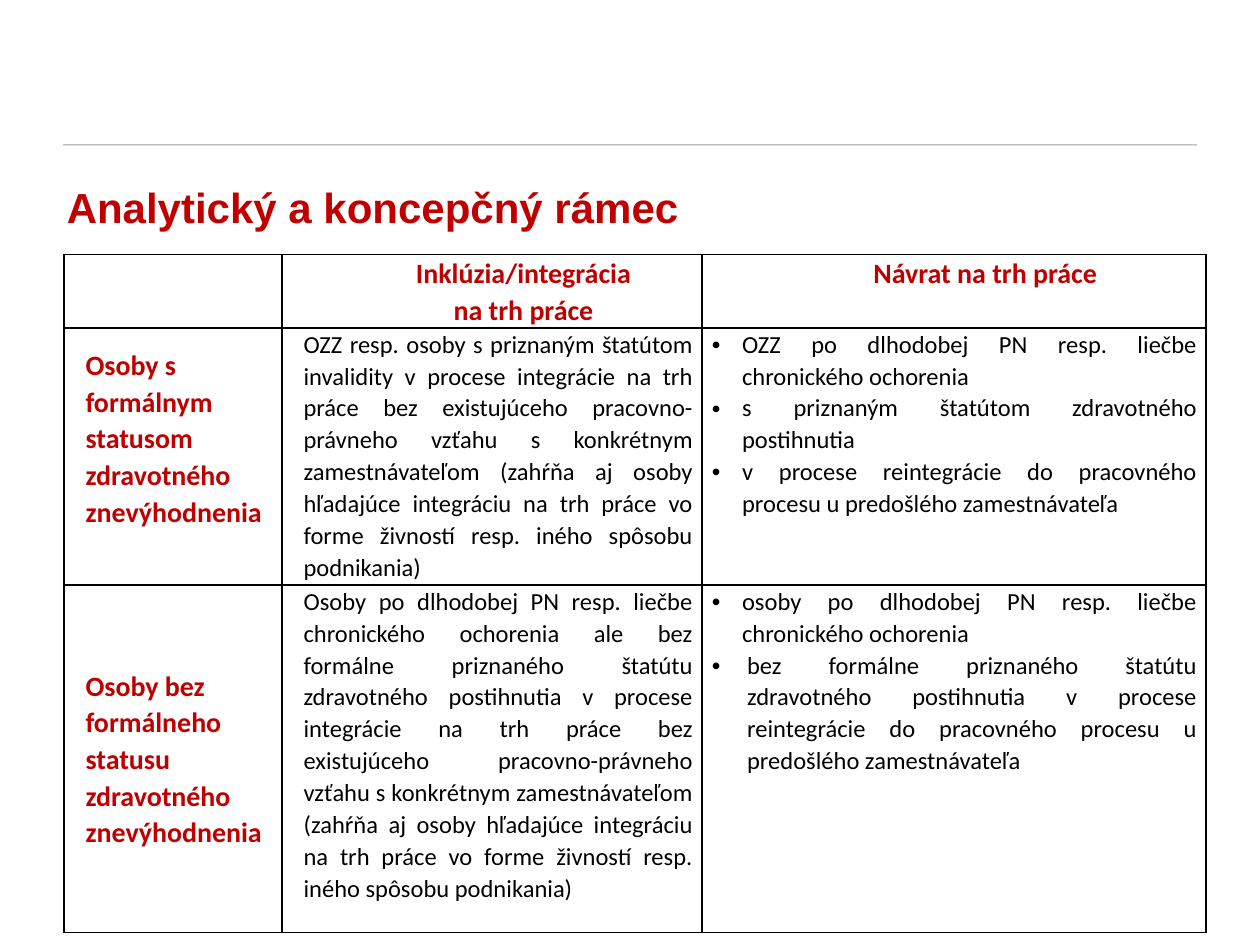
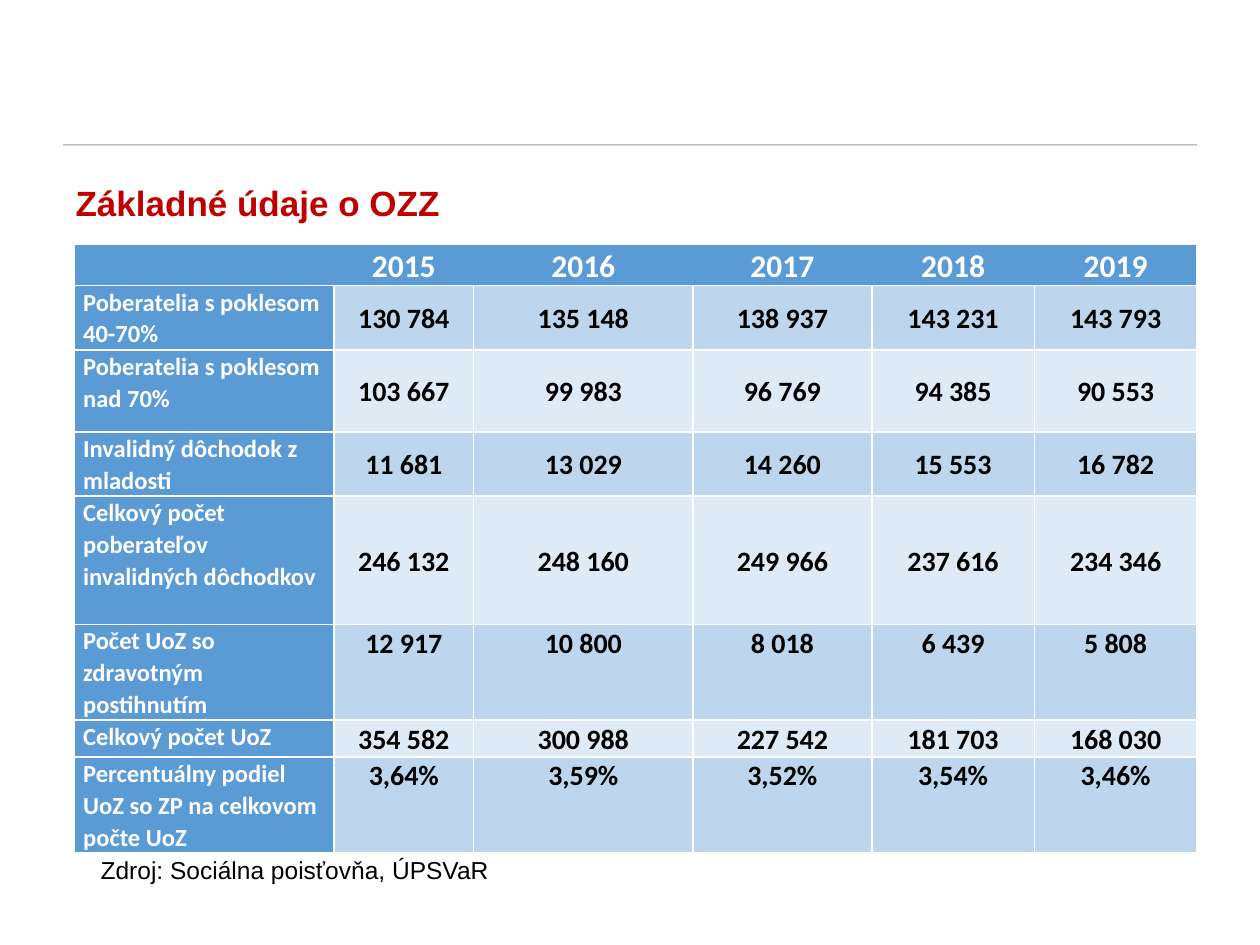
"""Build two slides on labour-market inclusion of people with health disadvantages."""
import pptx
import pptx.dml.color
import pptx.enum.shapes
import pptx.enum.text
import pptx.oxml
import pptx.oxml.ns
import pptx.util
from pptx.util import Inches

RED, BLACK, WHITE = "C00000", "000000", "FFFFFF"
HEADER_BLUE = "5B9BD5"
BAND_BLUES = ("BDD6EE", "DEEAF6")
ALIGN = pptx.enum.text.PP_ALIGN
ANCHOR = pptx.enum.text.MSO_ANCHOR
LINE_SPACING = 1.07

GROUP_HEADINGS = (
    "Osoby s formálnym statusom zdravotného znevýhodnenia",
    "Osoby bez formálneho statusu zdravotného znevýhodnenia",
)
INCLUSION = (
    "OZZ resp. osoby s priznaným štatútom invalidity v procese integrácie na trh práce bez "
    "existujúceho pracovno-právneho vzťahu s konkrétnym zamestnávateľom (zahŕňa aj osoby "
    "hľadajúce integráciu na trh práce vo forme živností resp. iného spôsobu podnikania)",
    "Osoby po dlhodobej PN resp. liečbe chronického ochorenia ale bez formálne priznaného "
    "štatútu zdravotného postihnutia v procese integrácie na trh práce bez existujúceho "
    "pracovno-právneho vzťahu s konkrétnym zamestnávateľom (zahŕňa aj osoby hľadajúce "
    "integráciu na trh práce vo forme živností resp. iného spôsobu podnikania)",
)
RETURN_TO_WORK = (
    (
        ("OZZ po dlhodobej PN resp. liečbe chronického ochorenia", 0.25),
        ("s priznaným štatútom zdravotného postihnutia", 0.25),
        ("v procese reintegrácie do pracovného procesu u predošlého zamestnávateľa", 0.25),
    ),
    (
        ("osoby po dlhodobej PN resp. liečbe chronického ochorenia", 0.25),
        ("bez formálne priznaného štatútu zdravotného postihnutia v procese reintegrácie "
         "do pracovného procesu u predošlého zamestnávateľa", 0.29),
    ),
)
YEARS = ("", "2015", "2016", "2017", "2018", "2019")
STATISTICS = (
    ("Poberatelia s poklesom 40-70%", "130 784", "135 148", "138 937", "143 231", "143 793"),
    ("Poberatelia s poklesom nad 70%", "103 667", "99 983", "96 769", "94 385", "90 553"),
    ("Invalidný dôchodok z mladosti", "11 681", "13 029", "14 260", "15 553", "16 782"),
    ("Celkový počet poberateľov invalidných dôchodkov",
     "246 132", "248 160", "249 966", "237 616", "234 346"),
    ("Počet UoZ so zdravotným postihnutím", "12 917", "10 800", "8 018", "6 439", "5 808"),
    ("Celkový počet UoZ", "354 582", "300 988", "227 542", "181 703", "168 030"),
    ("Percentuálny podiel UoZ so ZP na celkovom počte UoZ",
     "3,64%", "3,59%", "3,52%", "3,54%", "3,46%"),
)
CENTRED_STATISTICS = 4


def rgb(value):
    return pptx.dml.color.RGBColor.from_string(value)


def set_font(paragraph, name, size, color, bold=False):
    font = paragraph.font
    font.name, font.size, font.bold = name, pptx.util.Pt(size), bold
    font.color.rgb = rgb(color)


def add_xml(parent, tag, **attributes):
    child = pptx.oxml.parse_xml(f"<a:{tag} {pptx.oxml.ns.nsdecls('a')}/>")
    for key, value in attributes.items():
        child.set(key, str(value))
    parent.append(child)
    return child


def add_layout_rule(slide):
    """Draw the header rule and move it to the layout that all slides share."""
    rule = slide.shapes.add_connector(
        pptx.enum.shapes.MSO_CONNECTOR.STRAIGHT,
        Inches(0.5), Inches(1.15), Inches(9.5), Inches(1.15))
    rule.line.width = pptx.util.Pt(0.5)
    rule.line.color.rgb = rgb(BLACK)
    color = rule.line.fill._xPr.find(".//" + pptx.oxml.ns.qn("a:srgbClr"))
    add_xml(color, "alpha", val=40000)
    add_xml(rule.element.spPr, "effectLst")
    slide.slide_layout.shapes.element.append(rule.element)


def set_title(slide, text, left, width, size):
    title = slide.shapes.title
    title.left, title.top = Inches(left), Inches(1.39)
    title.width, title.height = Inches(width), Inches(0.5)
    frame = title.text_frame
    frame.text = text
    frame.vertical_anchor = ANCHOR.TOP
    frame.auto_size = pptx.enum.text.MSO_AUTO_SIZE.NONE
    paragraph = frame.paragraphs[0]
    paragraph.alignment = ALIGN.LEFT
    set_font(paragraph, "Arial", size, RED, True)


def add_plain_table(slide, left, top, columns, rows):
    """Add a table without the style's header and bands, sized in inches."""
    table = slide.shapes.add_table(
        len(rows), len(columns), Inches(left), Inches(top),
        Inches(sum(columns)), Inches(sum(rows))).table
    table.first_row = table.horz_banding = False
    for column, width in zip(table.columns, columns):
        column.width = Inches(width)
    for row, height in zip(table.rows, rows):
        row.height = Inches(height)
    return table


def set_borders(cell, color, sides="LRTB"):
    """Draw the named sides of a cell and clear the others."""
    properties = cell._tc.get_or_add_tcPr()
    for position, side in enumerate("LRTB"):
        border = add_xml(properties, "ln" + side, w=pptx.util.Pt(1))
        if side in sides:
            add_xml(add_xml(border, "solidFill"), "srgbClr", val=color)
        else:
            add_xml(border, "noFill")
        properties.insert(position, border)


def fill_cell(cell, lines, size, color, bold=True, align=ALIGN.LEFT, anchor=ANCHOR.TOP,
              indent=0, bulleted=False):
    """Write (text, indent) pairs or plain strings as the paragraphs of a cell."""
    cell.margin_left = cell.margin_right = Inches(0.07)
    cell.margin_top = cell.margin_bottom = 0
    cell.vertical_anchor = anchor
    frame = cell.text_frame
    for number, line in enumerate(lines):
        text, left = line if bulleted else (line, indent)
        paragraph = frame.add_paragraph() if number else frame.paragraphs[0]
        paragraph.text = text
        properties = paragraph._p.get_or_add_pPr()
        properties.set("marL", str(Inches(left)))
        properties.set("indent", str(Inches(0.01 - left) if bulleted else 0))
        if bulleted:
            add_xml(properties, "buFont", typeface="Arial")
            add_xml(properties, "buChar", char="•")
        paragraph.alignment = align
        paragraph.line_spacing = LINE_SPACING
        set_font(paragraph, "Calibri", size, color, bold)


def add_framework_table(slide):
    table = add_plain_table(slide, 0.51, 2.02, (1.73, 3.33, 4), (0.53, 2.04, 2.76))
    headings = ((), ("Inklúzia/integrácia", "na trh práce"), ("Návrat na trh práce",))
    for column, lines in enumerate(headings):
        fill_cell(table.cell(0, column), lines, 16, RED, align=ALIGN.CENTER, indent=0.5)
    groups = zip(GROUP_HEADINGS, INCLUSION, RETURN_TO_WORK)
    for row, (heading, inclusion, returning) in enumerate(groups, 1):
        fill_cell(table.cell(row, 0), [heading], 16, RED, anchor=ANCHOR.MIDDLE, indent=0.1)
        fill_cell(table.cell(row, 1), [inclusion], 14, BLACK, False, ALIGN.JUSTIFY, indent=0.1)
        fill_cell(table.cell(row, 2), returning, 14, BLACK, False, ALIGN.JUSTIFY, bulleted=True)
    table.cell(1, 0).margin_bottom = Inches(0.29)
    for cell in table.iter_cells():
        cell.fill.background()
        set_borders(cell, BLACK)


def add_statistics_table(slide):
    table = add_plain_table(slide, 0.59, 1.94, (2.06, 1.11, 1.74, 1.42, 1.29, 1.29),
                            (0.32, 0.51, 0.65, 0.51, 1.02, 0.76, 0.25, 0.76))
    for row, values in enumerate((YEARS, *STATISTICS)):
        anchor = ANCHOR.MIDDLE if row <= CENTRED_STATISTICS else ANCHOR.TOP
        for column, value in enumerate(values):
            cell = table.cell(row, column)
            fill, sides = HEADER_BLUE, "LRTB"
            if row == 0:
                fill_cell(cell, [value], 18, WHITE, align=ALIGN.CENTER, anchor=anchor)
                sides = "TB" + {0: "L", len(values) - 1: "R"}.get(column, "")
            elif column == 0:
                fill_cell(cell, [value], 14, WHITE)
            else:
                fill_cell(cell, [value], 16, BLACK, align=ALIGN.CENTER, anchor=anchor)
                fill = BAND_BLUES[(row - 1) % 2]
            cell.fill.solid()
            cell.fill.fore_color.rgb = rgb(fill)
            set_borders(cell, WHITE, sides)


def add_source_note(slide, text):
    note = slide.shapes.add_textbox(Inches(0.7), Inches(6.74), Inches(4.38), Inches(0.34))
    frame = note.text_frame
    frame.word_wrap = True
    frame.text = text
    set_font(frame.paragraphs[0], "Arial", 14, BLACK)


def main():
    presentation = pptx.Presentation()
    presentation.slide_width, presentation.slide_height = Inches(10), Inches(7.5)
    title_only = presentation.slide_layouts[5]

    framework = presentation.slides.add_slide(title_only)
    add_layout_rule(framework)
    set_title(framework, "Analytický a koncepčný rámec", 0.43, 6.85, 24)
    add_framework_table(framework)

    statistics = presentation.slides.add_slide(title_only)
    set_title(statistics, "Základné údaje o OZZ", 0.5, 9, 20)
    add_statistics_table(statistics)
    add_source_note(statistics, "Zdroj: Sociálna poisťovňa, ÚPSVaR")

    presentation.save("out.pptx")


if __name__ == "__main__":
    main()
